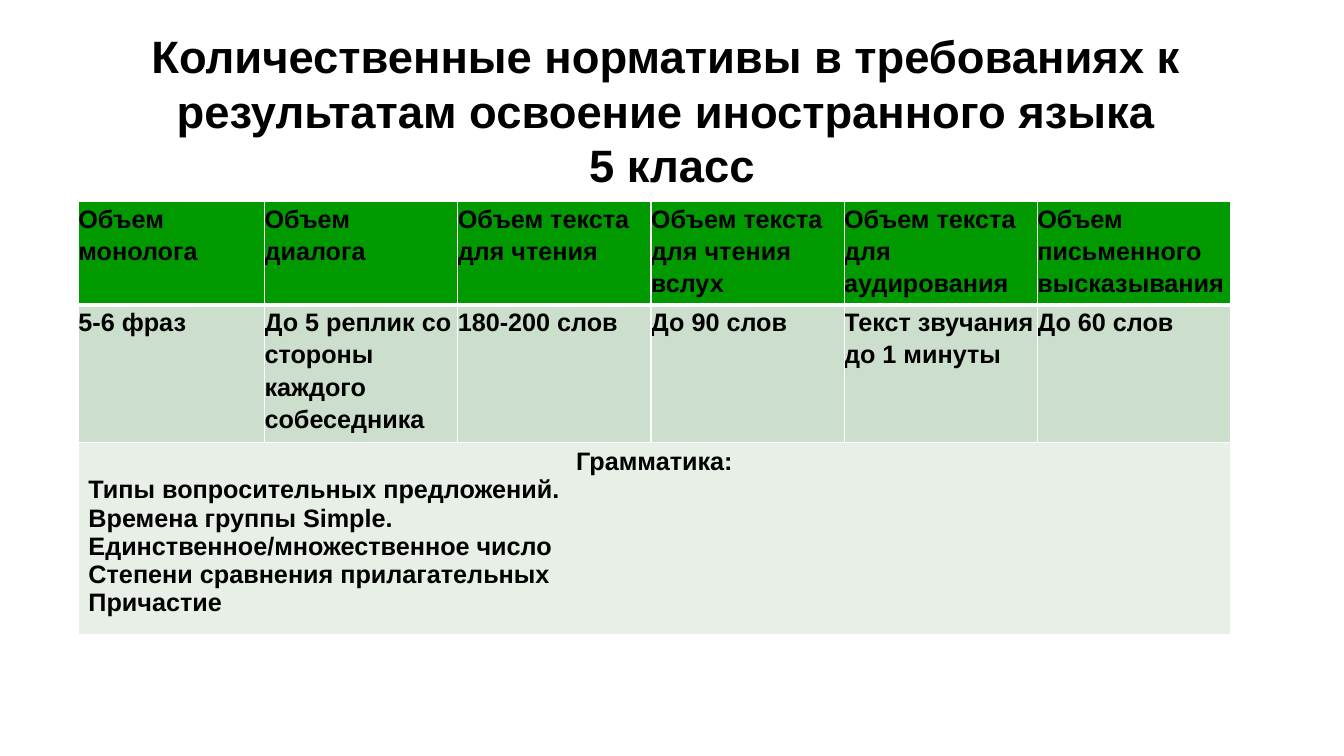
from lxml import etree
from pptx import Presentation
from pptx.dml.color import RGBColor
from pptx.enum.text import MSO_ANCHOR, PP_ALIGN
from pptx.oxml.ns import qn
from pptx.util import Pt

CENTER, LEFT = PP_ALIGN.CENTER, PP_ALIGN.LEFT
MIDDLE = MSO_ANCHOR.MIDDLE
BLACK = RGBColor(0x00, 0x00, 0x00)
WHITE = RGBColor(0xFF, 0xFF, 0xFF)
HEADER_GREEN = RGBColor(0x00, 0x99, 0x00)
NORM_GREEN = RGBColor(0xCC, 0xDE, 0xCC)
GRAMMAR_GREEN = RGBColor(0xE7, 0xEF, 0xE7)

TITLE = ("Количественные нормативы в требованиях к \v"
         "результатам освоение иностранного языка \v5 класс")
NORMS = {
    "Объем монолога": "5-6 фраз",
    "Объем диалога": "До 5 реплик со стороны каждого собеседника",
    "Объем текста для чтения": "180-200 слов",
    "Объем текста для чтения вслух": "До 90 слов",
    "Объем текста для аудирования": "Текст звучания до 1 минуты",
    "Объем письменного высказывания": "До 60 слов",
}
GRAMMAR_HEADING = "Грамматика:"
GRAMMAR_TOPICS = [
    "Типы вопросительных предложений.",
    "Времена группы Simple.",
    "Единственное/множественное число",
    "Степени сравнения прилагательных",
    "Причастие",
]
COLUMN_WIDTHS = [133] + [138] * 5
ROW_HEIGHTS = [68, 92, 127]


class NormsSlide:
    FONT = {"name": "Arial", "bold": True}
    NO_MARGINS = dict.fromkeys(
        ("margin_left", "margin_top", "margin_right", "margin_bottom"), Pt(0))

    def __init__(self, slide):
        self.slide = slide

    def fill_text(self, frame, lines, size, align=LEFT, spacing=None):
        frame.word_wrap = True
        frame.text = "\n".join(lines)
        for paragraph in frame.paragraphs:
            paragraph.alignment = align
            paragraph.line_spacing = spacing
            for key, value in {**self.FONT, "size": Pt(size)}.items():
                setattr(paragraph.font, key, value)
            paragraph.font.color.rgb = BLACK

    def title(self, text, left, top, width, height):
        box = self.slide.shapes.add_textbox(Pt(left), Pt(top), Pt(width), Pt(height))
        box.text_frame.vertical_anchor = MIDDLE
        self.fill_text(box.text_frame, [text], 32.4, CENTER, Pt(39))

    def table(self, left, top, widths, heights):
        table = self.slide.shapes.add_table(
            len(heights), len(widths), Pt(left), Pt(top),
            Pt(sum(widths)), Pt(sum(heights))).table
        for column, width in zip(table.columns, widths):
            column.width = Pt(width)
        for row, height in zip(table.rows, heights):
            row.height = Pt(height)
        return table

    def borders(self, cell, **widths):
        """Draw white cell edges; keyword names are the a:ln* tags."""
        properties = cell._tc.get_or_add_tcPr()
        for position, (edge, width) in enumerate(widths.items()):
            line = etree.Element(qn(f"a:{edge}"), w=str(Pt(width)))
            fill = etree.SubElement(line, qn("a:solidFill"))
            etree.SubElement(fill, qn("a:srgbClr"), val=str(WHITE))
            properties.insert(position, line)

    def cell(self, cell, fill, top_border=1, bottom_border=1):
        cell.fill.solid()
        cell.fill.fore_color.rgb = fill
        self.borders(cell, lnL=1, lnR=1, lnT=top_border, lnB=bottom_border)

    def norm_cell(self, cell, text, fill, **edges):
        self.cell(cell, fill, **edges)
        for key, value in self.NO_MARGINS.items():
            setattr(cell, key, value)
        self.fill_text(cell.text_frame, [text], 18, spacing=1.14)


def main():
    presentation = Presentation()
    presentation.slide_width, presentation.slide_height = Pt(960), Pt(540)
    norms = NormsSlide(presentation.slides.add_slide(presentation.slide_layouts[6]))

    norms.title(TITLE, 48, 15, 864, 127)
    table = norms.table(56, 144, COLUMN_WIDTHS, ROW_HEIGHTS)
    for column, (skill, norm) in enumerate(NORMS.items()):
        norms.norm_cell(table.cell(0, column), skill, HEADER_GREEN, bottom_border=3)
        norms.norm_cell(table.cell(1, column), norm, NORM_GREEN, top_border=3)
        norms.cell(table.cell(2, column), GRAMMAR_GREEN)

    grammar = table.cell(2, 0)
    grammar.merge(table.cell(2, len(NORMS) - 1))
    norms.fill_text(grammar.text_frame, [GRAMMAR_HEADING, *GRAMMAR_TOPICS], 18)
    grammar.text_frame.paragraphs[0].alignment = CENTER

    presentation.save("out.pptx")


if __name__ == "__main__":
    main()
